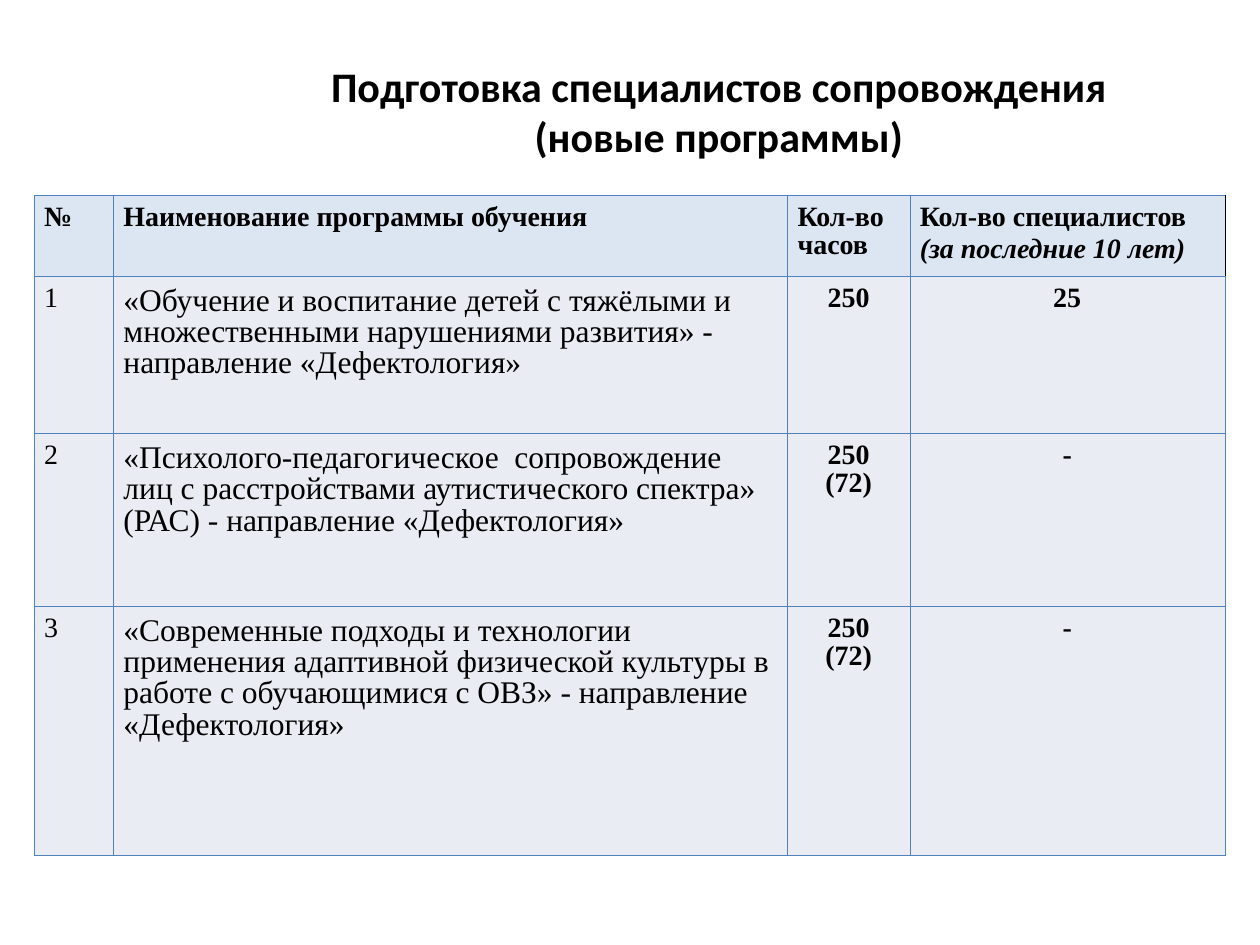
from lxml.etree import SubElement
from pptx import Presentation
from pptx.dml.color import RGBColor
from pptx.enum.text import MSO_ANCHOR as Anchor, MSO_AUTO_SIZE as Fit, PP_ALIGN as Align
from pptx.oxml.ns import qn
from pptx.util import Inches, Pt

BLACK = RGBColor(0, 0, 0)
BLUE = RGBColor(0x4F, 0x81, 0xBD)
HEAD = RGBColor(0xDC, 0xE6, 0xF2)
BODY = RGBColor(0xE9, 0xEC, 0xF3)

TITLE = "Подготовка специалистов сопровождения (новые программы)"
COLS = [0.63, 5.35, 0.97, 2.5]
HEIGHTS = [0.64, 1.25, 1.37, 1.98]
ROWS = [
    ["№", "Наименование программы обучения", "Кол-во часов",
     "Кол-во специалистов\n(за последние 10 лет)\u00a0"],
    ["1", "«Обучение и воспитание детей с тяжёлыми и множественными "
     "нарушениями развития» - направление «Дефектология»", "250", "25"],
    ["2", "«Психолого-педагогическое  сопровождение лиц с расстройствами "
     "аутистического спектра» (РАС) - направление «Дефектология»",
     "250\n(72)", "-"],
    ["3", "«Современные подходы и технологии применения адаптивной физической "
     "культуры в работе с обучающимися с ОВЗ» - направление «Дефектология»",
     "250\n(72)", "-"],
]


def style(par, face, size, bold):
    for run in par.runs:
        font = run.font
        font.name, font.size, font.bold = face, Pt(size), bold
        font.color.rgb = BLACK


def add_title(slide):
    title = slide.shapes.title
    title.left, title.top = Inches(2.32), Inches(0.43)
    title.width, title.height = Inches(6.77), Inches(0.8)
    frame = title.text_frame
    frame.text = TITLE
    frame.word_wrap = True
    frame.auto_size = Fit.NONE
    frame.vertical_anchor = Anchor.TOP
    par = frame.paragraphs[0]
    par.alignment = Align.CENTER
    style(par, "Calibri", 24, True)


def add_edges(cell, right):
    props = cell._tc.get_or_add_tcPr()
    for side in "LRTB":
        line = SubElement(props, qn(f"a:ln{side}"), w=str(Pt(0.23)))
        fill = SubElement(line, qn("a:solidFill"))
        color = right if side == "R" else BLUE
        SubElement(fill, qn("a:srgbClr"), val=str(color))


def fill_cell(cell, text, row, col):
    head, name = row == 0, row > 0 and col == 1
    last = head and col == len(COLS) - 1
    add_edges(cell, BLACK if last else BLUE)
    cell.fill.solid()
    cell.fill.fore_color.rgb = HEAD if head else BODY
    cell.margin_left = cell.margin_right = Inches(0.08)
    cell.margin_top = Inches(0.08 if name else 0.07)
    cell.margin_bottom = Inches(0.05)
    cell.text_frame.text = text
    for par in cell.text_frame.paragraphs:
        par.line_spacing = 0.9
        par.alignment = Align.CENTER if row and col > 1 else Align.LEFT
        style(par, "Times New Roman", 18 if name else 16, head or col > 1)
    if last:
        par.line_spacing = 1.04
        par.runs[0].font.italic = True


def add_grid(slide):
    table = slide.shapes.add_table(
        len(ROWS), len(COLS), Inches(0.27), Inches(1.55),
        Inches(sum(COLS)), Inches(sum(HEIGHTS))).table
    for col, width in zip(table.columns, COLS):
        col.width = Inches(width)
    for row, height in zip(table.rows, HEIGHTS):
        row.height = Inches(height)
    for r, texts in enumerate(ROWS):
        for c, text in enumerate(texts):
            fill_cell(table.cell(r, c), text, r, c)


def main():
    deck = Presentation()
    deck.slide_width, deck.slide_height = Inches(10), Inches(7.5)
    slide = deck.slides.add_slide(deck.slide_layouts[5])
    add_title(slide)
    add_grid(slide)
    deck.save("out.pptx")


if __name__ == "__main__":
    main()
